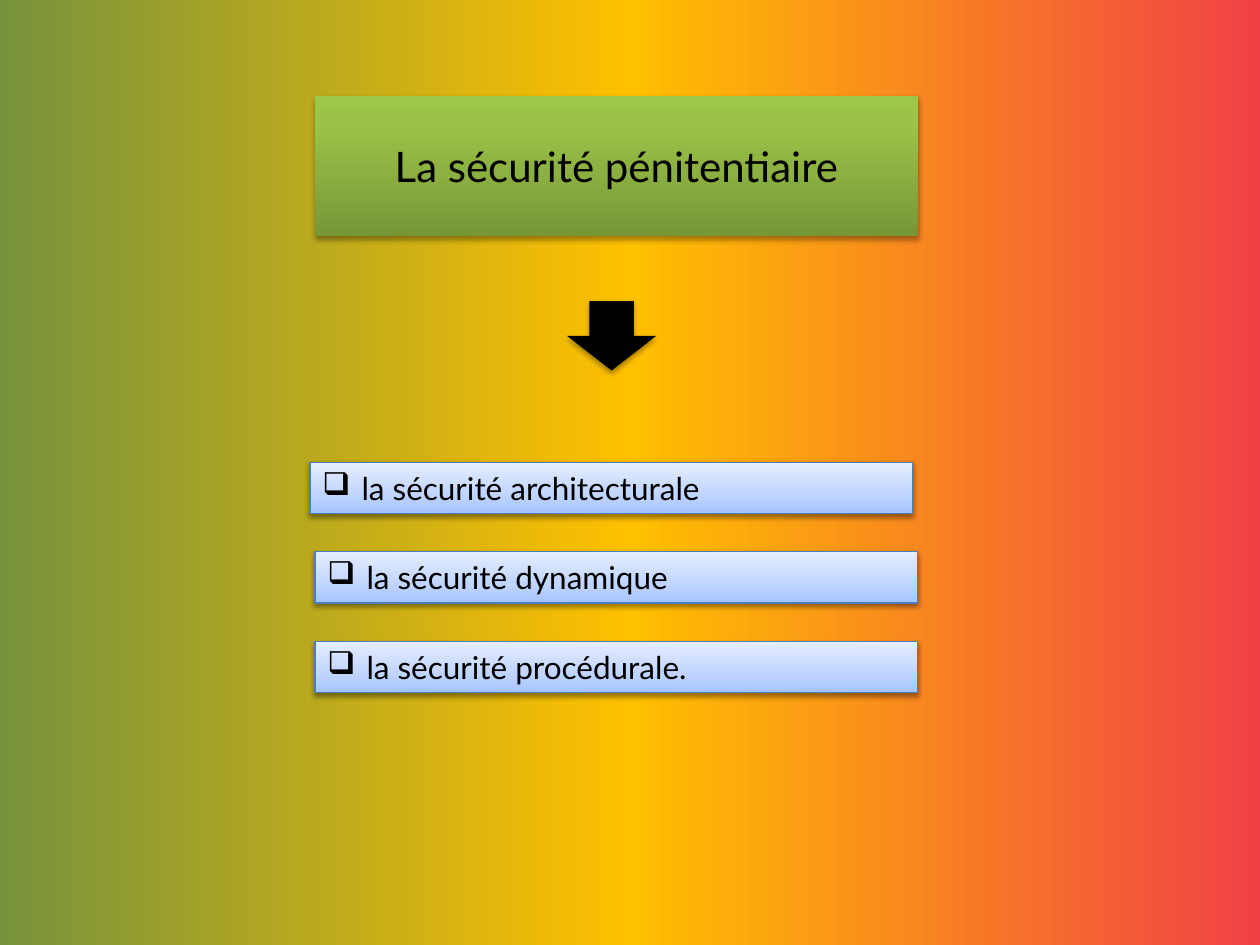
from copy import deepcopy
from dataclasses import dataclass

from lxml import etree
from pptx import Presentation
from pptx.dml.color import RGBColor
from pptx.enum import shapes, text
from pptx.oxml.ns import qn
from pptx.util import Cm, Pt

FONT = "Lato"
COLORS = {
    "black": "000000", "border": "4B7EBC",
    "green": "77933C", "amber": "FFC000", "red": "F14145",
    "title_low": "779737", "title_mid": "9BC348", "title_high": "9DC746",
    "item_low": "A4C4FF", "item_mid": "BFD4FF", "item_high": "E6EEFF",
}
BACKGROUND = ((0, "green"), (0.5, "amber"), (1, "red"))
TITLE_FILL = ((0, "title_low"), (0.8, "title_mid"), (1, "title_high"))
ITEM_FILL = ((0, "item_low"), (0.35, "item_mid"), (1, "item_high"))
ITEM_TOP, ITEM_PITCH = 9.32, 1.805


@dataclass
class Box:
    left: float
    top: float
    width: float
    height: float


@dataclass
class Item:
    label: str
    left: float


ITEMS = [
    Item("la sécurité architecturale", 6.25),
    Item("la sécurité dynamique", 6.35),
    Item("la sécurité procédurale.", 6.35),
]


def rgb(name: str) -> RGBColor:
    return RGBColor.from_string(COLORS[name])


def set_gradient(fill, root, stops: tuple, angle: int) -> None:
    fill.gradient()
    fill.gradient_angle = angle
    gs_list = root.find(".//" + qn("a:gsLst"))
    while len(gs_list) < len(stops):
        gs_list.append(deepcopy(gs_list[0]))
    for stop, (position, color) in zip(fill.gradient_stops, stops):
        stop.position = position
        stop.color.rgb = rgb(color)


def add_shadow(sp, distance: float, opacity: int) -> None:
    sp.shadow.inherit = False
    effects = sp._element.spPr.find(qn("a:effectLst"))
    shadow = etree.SubElement(
        effects, qn("a:outerShdw"), blurRad=str(Pt(3.1)), dist=str(Pt(distance)),
        dir="5400000", rotWithShape="0")
    color = etree.SubElement(shadow, qn("a:srgbClr"), val=COLORS["black"])
    etree.SubElement(color, qn("a:alpha"), val=str(opacity * 1000))


def add_shape(s, kind, box: Box, distance: float = 1.8, opacity: int = 35):
    sp = s.shapes.add_shape(
        kind, Cm(box.left), Cm(box.top), Cm(box.width), Cm(box.height))
    sp.line.fill.background()
    add_shadow(sp, distance, opacity)
    return sp


def set_text(sp, label: str, size: int, align):
    tf = sp.text_frame
    tf.word_wrap = True
    tf.vertical_anchor = text.MSO_ANCHOR.MIDDLE
    p = tf.paragraphs[0]
    p.text = label
    p.alignment = align
    r = p.runs[0]
    r.font.name = FONT
    r.font.size = Pt(size)
    r.font.color.rgb = rgb("black")
    return p


def add_title(s, label: str, box: Box) -> None:
    sp = add_shape(s, shapes.MSO_SHAPE.RECTANGLE, box)
    set_gradient(sp.fill, sp._element, TITLE_FILL, 90)
    set_text(sp, label, 24, text.PP_ALIGN.CENTER)


def add_arrow(s, box: Box) -> None:
    sp = add_shape(s, shapes.MSO_SHAPE.DOWN_ARROW, box)
    sp.fill.solid()
    sp.fill.fore_color.rgb = rgb("black")


def add_item(s, item: Item, top: float) -> None:
    box = Box(item.left, top, 12.15, 1.03)
    sp = add_shape(s, shapes.MSO_SHAPE.RECTANGLE, box, 1.6, 38)
    set_gradient(sp.fill, sp._element, ITEM_FILL, 90)
    sp.line.color.rgb = rgb("border")
    sp.line.width = Pt(0.75)
    p = set_text(sp, item.label, 18, text.PP_ALIGN.LEFT)
    pPr = p._p.get_or_add_pPr()
    indent = Cm(0.79)
    pPr.set("marL", str(indent))
    pPr.set("indent", str(-indent))
    etree.SubElement(pPr, qn("a:buChar"), char="❑")


def main() -> None:
    prs = Presentation()
    prs.slide_width, prs.slide_height = Cm(25.4), Cm(19.05)
    s = prs.slides.add_slide(prs.slide_layouts[6])
    set_gradient(s.background.fill, s._element, BACKGROUND, 0)
    add_title(s, "La sécurité pénitentiaire", Box(6.35, 1.93, 12.15, 2.82))
    add_arrow(s, Box(11.43, 6.07, 1.8, 1.4))
    for i, item in enumerate(ITEMS):
        add_item(s, item, ITEM_TOP + i * ITEM_PITCH)
    prs.save("out.pptx")


if __name__ == "__main__":
    main()
